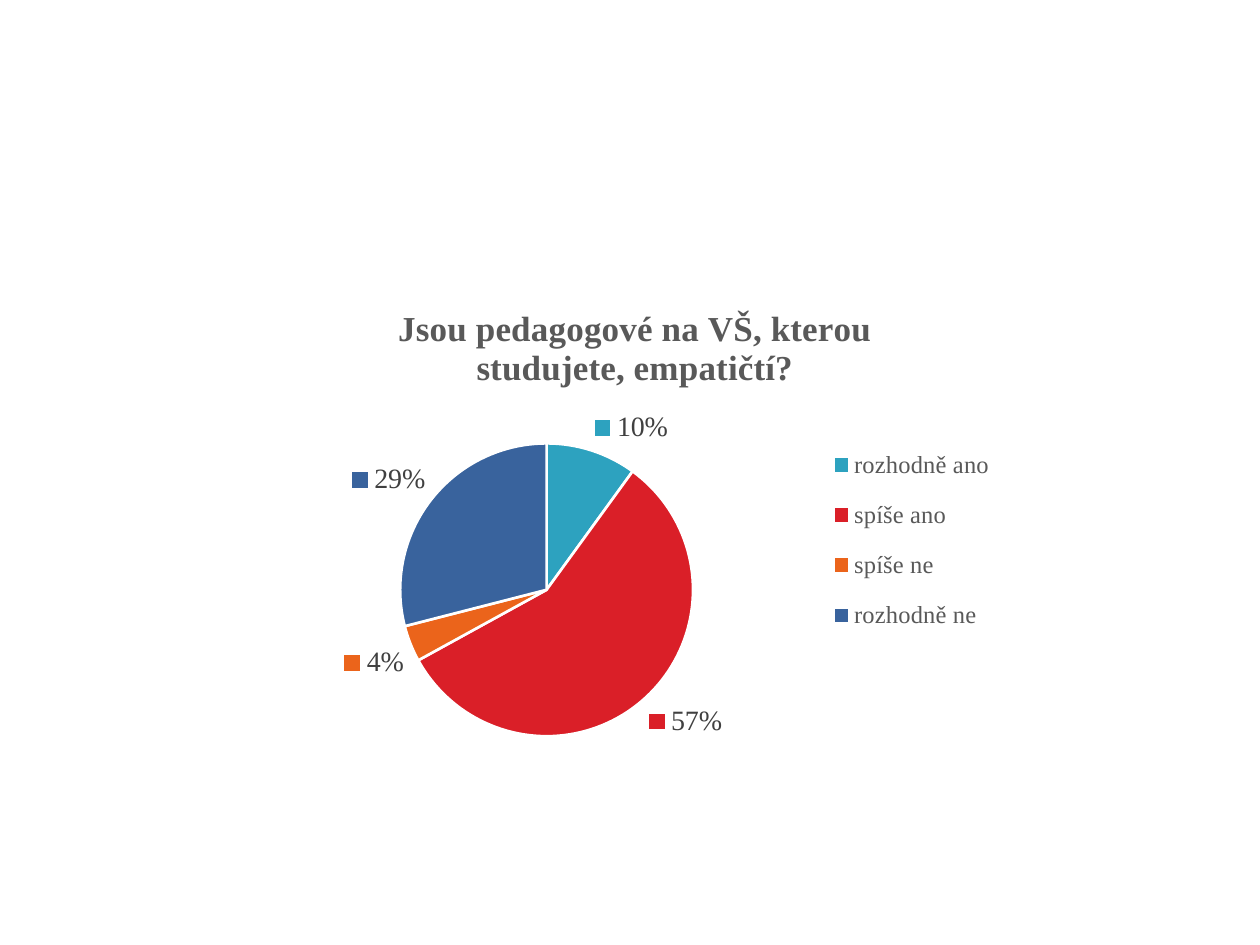
from lxml.etree import SubElement
from pptx import Presentation
from pptx.chart.data import CategoryChartData
from pptx.dml.color import RGBColor
from pptx.enum.chart import XL_CHART_TYPE, XL_LABEL_POSITION, XL_LEGEND_POSITION
from pptx.oxml.ns import qn
from pptx.util import Inches, Pt


def style_font(font, size, color, name="Times New Roman", bold=False):
    font.size = Pt(size)
    font.name = name
    font.bold = bold
    font.color.rgb = RGBColor.from_string(color)


def place(element, index, **shares):
    for old_layout in element.findall(qn("c:layout")):
        element.remove(old_layout)
    layout = SubElement(element, qn("c:layout"))
    element.insert(index, layout)
    manual = SubElement(layout, qn("c:manualLayout"))
    if element.tag == qn("c:plotArea"):
        SubElement(manual, qn("c:layoutTarget")).set("val", "inner")
    for mode in ("xMode", "yMode"):
        SubElement(manual, qn(f"c:{mode}")).set("val", "edge")
    for side, share in shares.items():
        SubElement(manual, qn(f"c:{side}")).set("val", str(share))


deck = Presentation()
deck.slide_width, deck.slide_height = Inches(10), Inches(7.5)
page = deck.slides.add_slide(deck.slide_layouts[6])

answers = {
    "rozhodně ano": (10, "2DA2BF"),
    "spíše ano": (57, "DA1F28"),
    "spíše ne": (4, "EB641B"),
    "rozhodně ne": (29, "39639D"),
}
data = CategoryChartData()
data.categories = list(answers)
data.add_series("Series 1", [value for value, color in answers.values()])
chart = page.shapes.add_chart(
    XL_CHART_TYPE.PIE, Inches(1.85), Inches(2.18), Inches(6.3), Inches(3.94), data
).chart
style_font(chart.font, 10, "000000", "Cambria")

chart.has_title = True
title = chart.chart_title
title.text_frame.text = "Jsou pedagogové na VŠ, kterou studujete, empatičtí?"
style_font(title.text_frame.paragraphs[0].runs[0].font, 20, "595959", bold=True)
place(title._element, 1, x=0.2, y=0.05)

chart.has_legend = True
legend = chart.legend
legend.position = XL_LEGEND_POSITION.RIGHT
legend.include_in_layout = False
style_font(legend.font, 14, "595959")
place(legend._element, 1, x=0.74, y=0.31, w=0.23, h=0.45)

plot = chart.plots[0]
plot.vary_by_categories = True
place(plot._element.getparent(), 0, x=0.21, y=0.34, w=0.37, h=0.59)
series = plot.series[0]
for index, (value, color) in enumerate(answers.values()):
    slice_format = series.points[index].format
    slice_format.fill.solid()
    slice_format.fill.fore_color.rgb = RGBColor.from_string(color)
    slice_format.line.color.rgb = RGBColor.from_string("FFFFFF")
    slice_format.line.width = Pt(1.5)

labels = series.data_labels
labels.show_percentage = True
labels.show_value = False
labels.show_legend_key = True
labels.number_format = "0%"
labels.number_format_is_linked = False
labels.position = XL_LABEL_POSITION.OUTSIDE_END
style_font(labels.font, 16, "404040")

deck.save("out.pptx")
